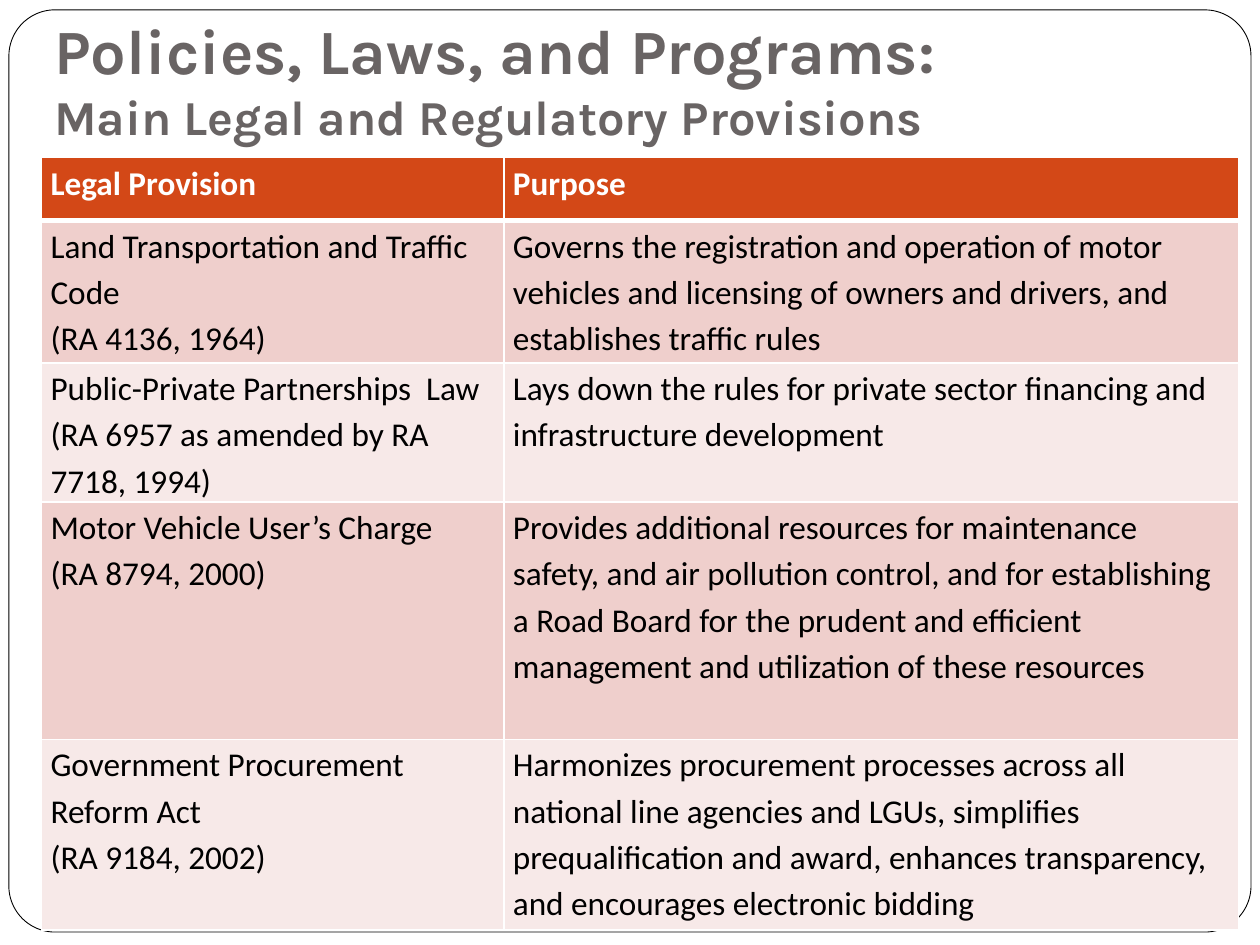
import pptx
import pptx.util
import pptx.dml.color
import pptx.enum.shapes
import pptx.enum.text
import pptx.oxml
import pptx.oxml.ns
from pptx.util import Cm, Pt

# Content
TITLE = ("Policies, Laws, and Programs:", "Main Legal and Regulatory Provisions")
ROWS = [
    ("Legal Provision", "Purpose"),
    ("Land Transportation and Traffic Code\n(RA 4136, 1964)",
     "Governs the registration and operation of motor vehicles and licensing "
     "of owners and drivers, and establishes traffic rules"),
    ("Public-Private Partnerships  Law\n(RA 6957 as amended by RA 7718, 1994)",
     "Lays down the rules for private sector financing and infrastructure "
     "development"),
    ("Motor Vehicle User’s Charge\n(RA 8794, 2000)",
     "Provides additional resources for maintenance safety, and air pollution "
     "control, and for establishing a Road Board for the prudent and efficient "
     "management and utilization of these resources"),
    ("Government Procurement Reform Act\n(RA 9184, 2002)",
     "Harmonizes procurement processes across all national line agencies and "
     "LGUs, simplifies prequalification and award, enhances transparency, and "
     "encourages electronic bidding"),
]
WIDTHS = (9.32, 14.81)
HEIGHTS = (1.27, 2.87, 1.9, 4.78, 3.84)

THEME = {
    "white": "FFFFFF", "black": "000000", "title": "696464", "head": "D34817",
    "bands": ("EFCFCC", "F7E9E8"),
    "title font": "Karla", "body font": "Calibri",
    "title sizes": (36, 27.9), "body size": 19,
}


def color(code):
    return pptx.dml.color.RGBColor.from_string(code)


def style(run, font, size, code, bold):
    run.font.name, run.font.size = font, Pt(size)
    run.font.color.rgb, run.font.bold = color(code), bold


def border(cell, widths):
    """Add solid lines, given in points, to the sides of a cell."""
    props = cell._tc.get_or_add_tcPr()
    for spot, (side, width) in enumerate(widths.items()):
        line = pptx.oxml.parse_xml(
            f'<a:ln{side} {pptx.oxml.ns.nsdecls("a")} w="{Pt(width)}">'
            f'<a:solidFill><a:srgbClr val="{THEME["white"]}"/></a:solidFill>'
            f'</a:ln{side}>')
        props.insert(spot, line)


def add_frame(slide):
    frame = slide.shapes.add_shape(
        pptx.enum.shapes.MSO_SHAPE.ROUNDED_RECTANGLE,
        Cm(0.18), Cm(0.2), Cm(25.04), Cm(18.59))
    frame.adjustments[0] = 0.05
    frame.shadow.inherit = False
    frame.fill.solid()
    frame.fill.fore_color.rgb = color(THEME["white"])
    frame.line.color.rgb = color(THEME["black"])
    frame.line.width = Pt(0.5)
    # Send it behind the title
    slide.shapes.title._element.addprevious(frame._element)


def add_title(slide):
    title = slide.shapes.title
    title.left, title.top = Cm(0.84), Cm(0)
    title.width, title.height = Cm(21.59), Cm(3.18)
    box = title.text_frame
    box.auto_size = pptx.enum.text.MSO_AUTO_SIZE.NONE
    box.vertical_anchor = pptx.enum.text.MSO_ANCHOR.BOTTOM
    box.margin_left = box.margin_right = box.margin_bottom = Cm(0.25)
    box.margin_top = Cm(0.13)
    box.text = "\v".join(TITLE)
    para = box.paragraphs[0]
    para.alignment = pptx.enum.text.PP_ALIGN.LEFT
    for run, size in zip(para.runs, THEME["title sizes"]):
        style(run, THEME["title font"], size, THEME["title"], True)


def fill_cell(cell, text, row):
    head = row == 0
    fill = THEME["head"] if head else THEME["bands"][(row - 1) % 2]
    cell.fill.solid()
    cell.fill.fore_color.rgb = color(fill)
    cell.margin_left = cell.margin_right = Cm(0.18)
    cell.margin_top = cell.margin_bottom = Cm(0)
    cell.text = text
    for para in cell.text_frame.paragraphs:
        para.line_spacing = 1.15
        for run in para.runs:
            style(run, THEME["body font"], THEME["body size"],
                  THEME["white" if head else "black"], head)
    border(cell, {"L": 1, "R": 1, "T": 3 if row == 1 else 1, "B": 3 if head else 1})


def add_grid(slide):
    grid = slide.shapes.add_table(
        len(ROWS), len(WIDTHS), Cm(0.84), Cm(3.18),
        Cm(sum(WIDTHS)), Cm(sum(HEIGHTS))).table
    for col, width in zip(grid.columns, WIDTHS):
        col.width = Cm(width)
    for row, (texts, height) in enumerate(zip(ROWS, HEIGHTS)):
        grid.rows[row].height = Cm(height)
        for col, text in enumerate(texts):
            fill_cell(grid.cell(row, col), text, row)


def main():
    deck = pptx.Presentation()
    deck.slide_width, deck.slide_height = Cm(25.4), Cm(19.05)
    slide = deck.slides.add_slide(deck.slide_layouts[5])
    add_frame(slide)
    add_title(slide)
    add_grid(slide)
    deck.save("out.pptx")


if __name__ == "__main__":
    main()
